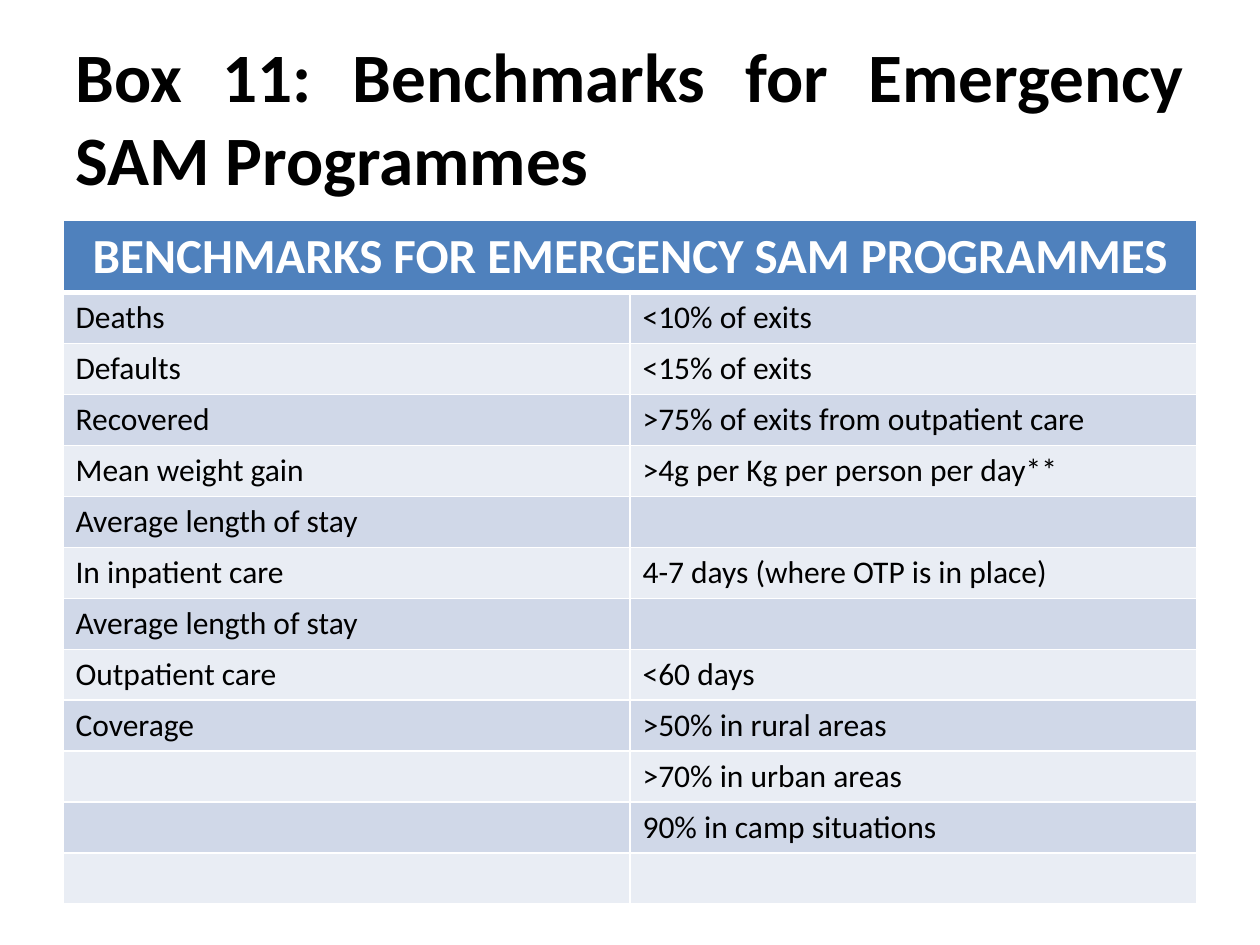
from dataclasses import dataclass

from lxml import etree
from pptx import Presentation
from pptx.dml.color import RGBColor
from pptx.enum.text import MSO_ANCHOR, PP_ALIGN
from pptx.oxml.ns import qn
from pptx.util import Inches, Pt

LEFT, MID, JUST = PP_ALIGN.LEFT, PP_ALIGN.CENTER, PP_ALIGN.JUSTIFY
CENTRE = MSO_ANCHOR.MIDDLE
WIDE, HIGH = Inches(10), Inches(7.5)


@dataclass(frozen=True)
class Theme:
    font: str = "Calibri"
    ink: str = "000000"
    paper: str = "FFFFFF"
    head: str = "4F81BD"
    bands: tuple[str, str] = ("D0D8E8", "E9EDF4")
    title: float = 39.6
    label: float = 28
    body: float = 18
    rule: float = 1
    thick: float = 3


@dataclass(frozen=True)
class Mark:
    name: str
    goal: str


@dataclass(frozen=True)
class Style:
    size: float
    tint: str
    bold: bool = False
    align: PP_ALIGN = LEFT


THEME = Theme()
TITLE = Style(THEME.title, THEME.ink, True, JUST)
HEAD = Style(THEME.label, THEME.paper, True, MID)
BODY = Style(THEME.body, THEME.ink)

MARKS = [
    Mark("Deaths", "<10% of exits"),
    Mark("Defaults", "<15% of exits"),
    Mark("Recovered", ">75% of exits from outpatient care"),
    Mark("Mean weight gain", ">4g per Kg per person per day**"),
    Mark("Average length of stay", ""),
    Mark("In inpatient care", "4-7 days (where OTP is in place)"),
    Mark("Average length of stay", ""),
    Mark("Outpatient care", "<60 days"),
    Mark("Coverage", ">50% in rural areas"),
    Mark("", ">70% in urban areas"),
    Mark("", "90% in camp situations"),
    Mark("", ""),
]


def write(frame, text: str, style: Style) -> None:
    frame.text = text
    para = frame.paragraphs[0]
    para.alignment = style.align
    for item in (para, *para.runs):
        item.font.name = THEME.font
        item.font.size = Pt(style.size)
        item.font.bold = style.bold
        item.font.color.rgb = RGBColor.from_string(style.tint)


def edge(cell, side: str, width: float) -> None:
    props = cell._tc.get_or_add_tcPr()
    line = etree.SubElement(props, qn(f"a:ln{side}"), w=str(Pt(width)))
    fill = etree.SubElement(line, qn("a:solidFill"))
    etree.SubElement(fill, qn("a:srgbClr"), val=THEME.paper)


def paint(cell, fill: str, top: float, base: float) -> None:
    widths = {"L": THEME.rule, "R": THEME.rule, "T": top, "B": base}
    for side, width in widths.items():
        edge(cell, side, width)
    cell.fill.solid()
    cell.fill.fore_color.rgb = RGBColor.from_string(fill)


def draw_title(slide, text: str) -> None:
    box = slide.shapes.add_textbox(
        int(WIDE * 0.05), int(HIGH * 0.04), int(WIDE * 0.9), Inches(1.25))
    frame = box.text_frame
    frame.word_wrap = True
    frame.vertical_anchor = CENTRE
    write(frame, text, TITLE)


def draw_table(slide, head: str, marks: list[Mark]) -> None:
    tall, step = Inches(0.57), Inches(4.86) // len(marks)
    table = slide.shapes.add_table(
        len(marks) + 1, 2, int(WIDE * 0.05), Inches(1.75),
        int(WIDE * 0.9), tall + step * len(marks)).table
    for row in table.rows:
        row.height = step
    table.rows[0].height = tall
    for col in range(2):
        paint(table.cell(0, col), THEME.head, THEME.rule, THEME.thick)
    table.cell(0, 0).merge(table.cell(0, 1))
    write(table.cell(0, 0).text_frame, head, HEAD)
    for row, mark in enumerate(marks, 1):
        top = THEME.thick if row == 1 else THEME.rule
        for col, text in enumerate((mark.name, mark.goal)):
            cell = table.cell(row, col)
            paint(cell, THEME.bands[(row - 1) % 2], top, THEME.rule)
            write(cell.text_frame, text, BODY)


def main() -> None:
    deck = Presentation()
    deck.slide_width, deck.slide_height = WIDE, HIGH
    slide = deck.slides.add_slide(deck.slide_layouts[6])
    draw_title(slide, "Box 11: Benchmarks for Emergency SAM Programmes")
    draw_table(slide, "BENCHMARKS FOR EMERGENCY SAM PROGRAMMES", MARKS)
    deck.save("out.pptx")


if __name__ == "__main__":
    main()
